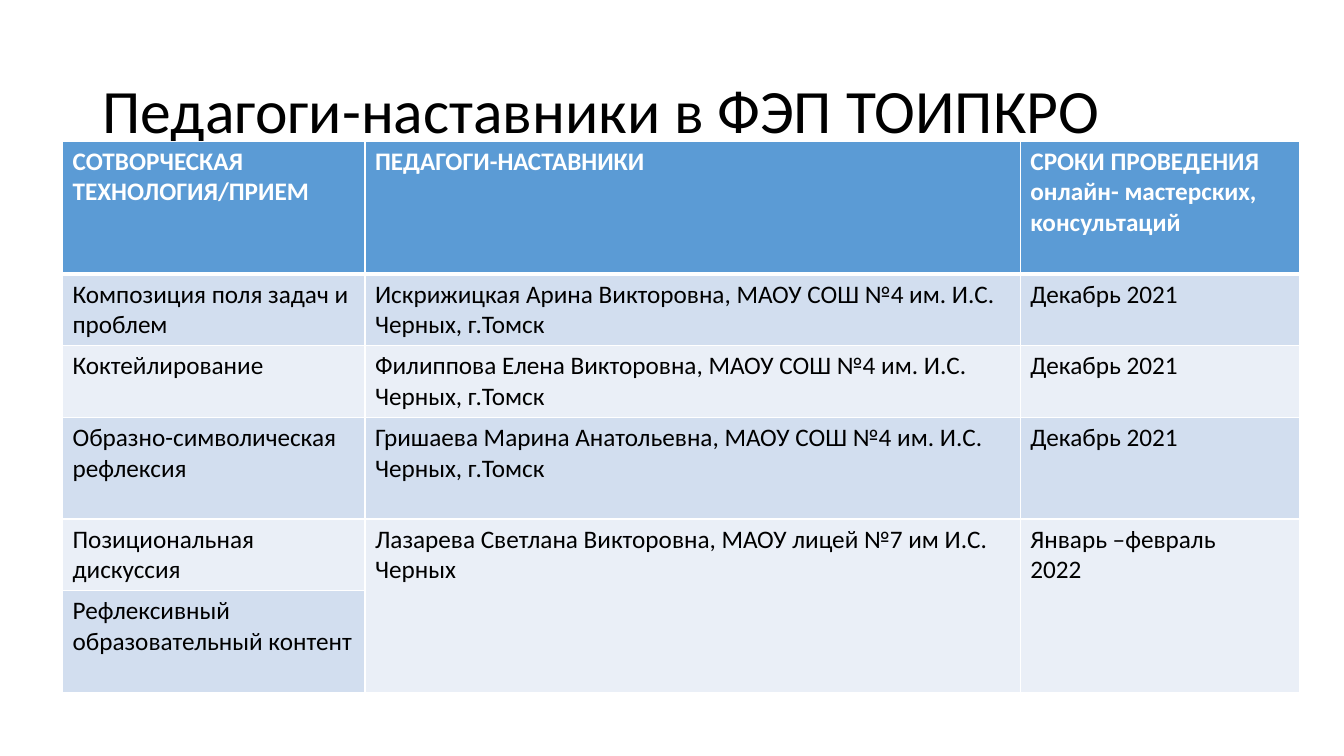
from lxml.etree import SubElement
from pptx import Presentation
from pptx.dml.color import RGBColor
from pptx.enum.text import MSO_ANCHOR
from pptx.oxml.ns import qn
from pptx.util import Inches, Pt

# Content
TITLE = "Педагоги-наставники в ФЭП ТОИПКРО"
HEADINGS = (
    "СОТВОРЧЕСКАЯ ТЕХНОЛОГИЯ/ПРИЕМ",
    "ПЕДАГОГИ-НАСТАВНИКИ",
    "СРОКИ ПРОВЕДЕНИЯ онлайн- мастерских, консультаций",
)
MENTORS = [
    ("Композиция поля задач и проблем",
     "Искрижицкая Арина Викторовна, МАОУ СОШ №4 им. И.С. Черных, г.Томск",
     "Декабрь 2021"),
    ("Коктейлирование",
     "Филиппова Елена Викторовна, МАОУ СОШ №4 им. И.С. Черных, г.Томск",
     "Декабрь 2021"),
    ("Образно-символическая рефлексия",
     "Гришаева Марина Анатольевна, МАОУ СОШ №4 им. И.С. Черных, г.Томск",
     "Декабрь 2021"),
    ("Позициональная дискуссия",
     "Лазарева Светлана Викторовна, МАОУ лицей №7 им И.С. Черных",
     "Январь –февраль\n2022"),
    ("Рефлексивный образовательный контент", None, None),  # None joins the cell above
]

# Layout and style
COLUMN_WIDTHS = (3, 6.5, 2.77)
ROW_HEIGHTS = (1.32, 0.71, 0.71, 1.01, 0.71, 1.01)
FONT = "Calibri"
BLACK, WHITE = "000000", "FFFFFF"
HEADER_FILL, BANDS = "5B9BD5", ("D2DEEF", "EAEFF7")
THIN, THICK = 1, 3


def color(hex_value):
    return RGBColor.from_string(hex_value)


def style(paragraph, size, ink, bold=False):
    font = paragraph.font
    font.name, font.size, font.bold = FONT, Pt(size), bold
    font.color.rgb = color(ink)


def add_borders(cell, top, bottom):
    properties = cell._tc.get_or_add_tcPr()
    for side, width in (("L", THIN), ("R", THIN), ("T", top), ("B", bottom)):
        line = SubElement(properties, qn(f"a:ln{side}"), w=str(Pt(width)))
        fill = SubElement(line, qn("a:solidFill"))
        SubElement(fill, qn("a:srgbClr"), val=WHITE)


def add_title(slide):
    title = slide.shapes.add_textbox(
        Inches(0.92), Inches(0.4), Inches(11.5), Inches(1.45)).text_frame
    title.word_wrap = True
    title.vertical_anchor = MSO_ANCHOR.MIDDLE
    title.text = TITLE
    title.paragraphs[0].line_spacing = 0.9
    style(title.paragraphs[0], 44, BLACK)


def add_schedule(slide):
    rows = [HEADINGS, *MENTORS]
    schedule = slide.shapes.add_table(
        len(rows), len(HEADINGS), Inches(0.62), Inches(1.4),
        Inches(sum(COLUMN_WIDTHS)), Inches(sum(ROW_HEIGHTS))).table
    schedule.horz_banding = False
    for column, width in zip(schedule.columns, COLUMN_WIDTHS):
        column.width = Inches(width)
    for row, height in zip(schedule.rows, ROW_HEIGHTS):
        row.height = Inches(height)

    for r, entries in enumerate(rows):
        header = r == 0
        for c, entry in enumerate(entries):
            cell = schedule.cell(r, c)
            # Borders precede the fill in the cell properties
            add_borders(cell, THICK if r == 1 else THIN, THICK if header else THIN)
            cell.fill.solid()
            cell.fill.fore_color.rgb = color(HEADER_FILL if header else BANDS[(r - 1) % 2])
            if entry is None:
                schedule.cell(r - 1, c).merge(cell)
                continue
            cell.text = entry
            for paragraph in cell.text_frame.paragraphs:
                style(paragraph, 18, WHITE if header else BLACK, header)


def main():
    deck = Presentation()
    deck.slide_width, deck.slide_height = Inches(13.33), Inches(7.5)
    slide = deck.slides.add_slide(deck.slide_layouts[6])
    add_title(slide)
    add_schedule(slide)
    deck.save("out.pptx")


if __name__ == "__main__":
    main()
